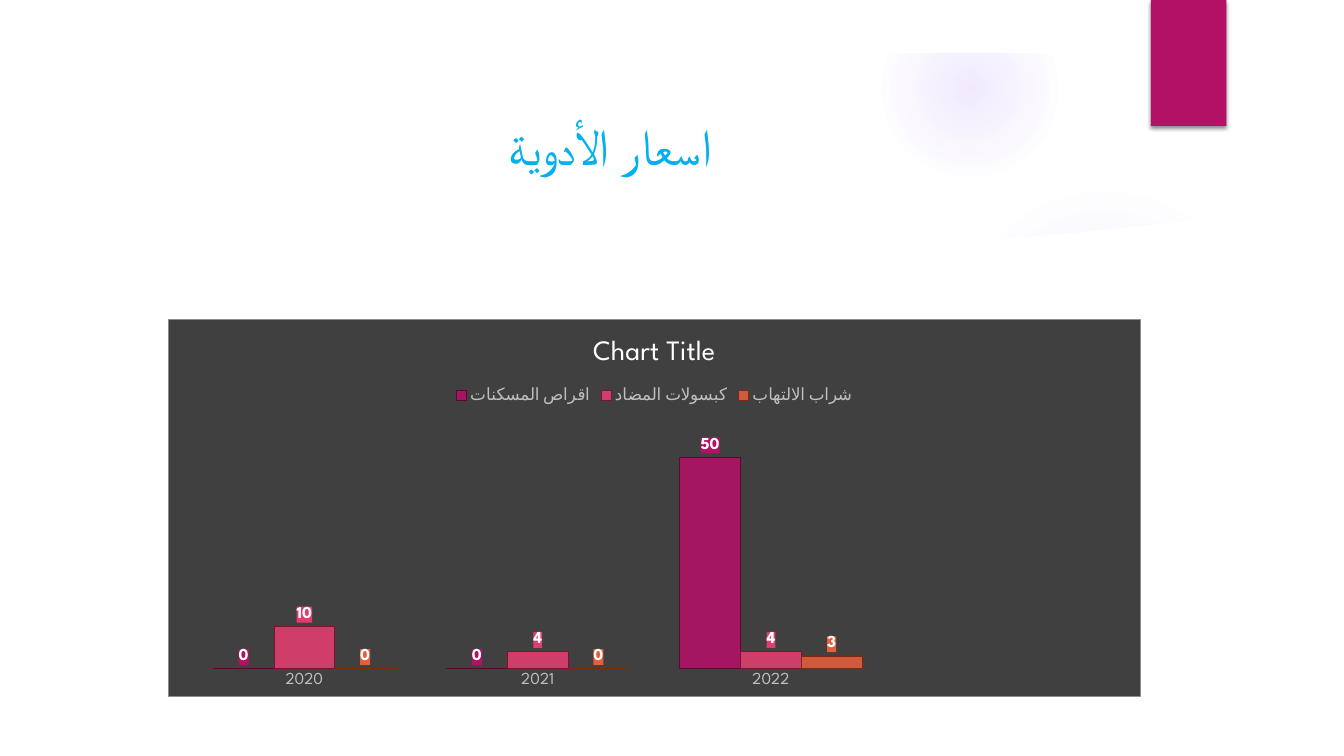
from dataclasses import dataclass

from lxml import etree
from pptx import Presentation
from pptx import util as u
from pptx.chart.data import CategoryChartData
from pptx.dml.color import RGBColor
from pptx.enum import chart as c
from pptx.enum import shapes, text
from pptx.oxml import parse_xml
from pptx.oxml.ns import nsdecls, qn

FONT = "League Spartan"
CELL = u.Inches(1) / 12  # the slide is 160 columns by 90 rows
COLUMNS, ROWS = 160, 90


@dataclass
class Area:
    column: float
    row: float
    columns: float
    rows: float

    def emu(self) -> list[int]:
        return [round(n * CELL) for n in (self.column, self.row, self.columns, self.rows)]


@dataclass
class Glow:
    area: Area
    stops: list[tuple[int, int]]  # position and opacity, in percent


@dataclass
class Medicine:
    name: str
    prices: list[int | None]
    color: str
    outline: str


GLOWS = [
    Glow(Area(113, 22, 37, 37), [(0, 7), (36, 6), (69, 0)]),
    Glow(Area(105, 0, 21, 21), [(0, 14), (36, 7), (73, 0)]),
]
BAND = [(112, 30), (154.7, 25.7), (154, 19.9), (145.6, 22.6), (137.3, 25),
        (129, 27), (120, 28.5), (111.6, 29.2)]
WAVE = [(6, 24.5), (6, 84), (154, 84), (154, 24.5), (140.6, 26.4), (127.2, 27.8),
        (113.9, 28.9), (100.8, 29.5), (85, 29.8), (70, 29.6), (53, 28.9),
        (34, 27.6), (16, 25.8)]
MEDICINES = [
    Medicine("اقراص المسكنات", [0, 0, 50, None], "B31166", "5A0833"),
    Medicine("كبسولات المضاد", [10, 4, 4, None], "E33D6F", "7E1233"),
    Medicine("شراب الالتهاب", [0, 0, 3, None], "E45F3C", "7E2812"),
]


def rgb(color: str) -> RGBColor:
    return RGBColor.from_string(color)


def style(font, size: float, color: str, bold: bool = False) -> None:
    font.name, font.size, font.bold = FONT, u.Pt(size), bold
    font.color.rgb = rgb(color)


def paint(fill, color: str, opacity: int = 100) -> None:
    fill.solid()
    fill.fore_color.rgb = rgb(color)
    if opacity < 100:
        tone = fill._xPr.find(qn("a:solidFill"))[0]
        etree.SubElement(tone, qn("a:alpha")).set("val", str(opacity * 1000))


def add_preset(page, kind, area: Area, color: str):
    shape = page.shapes.add_shape(kind, *area.emu())
    shape.shadow.inherit = False
    shape.line.fill.background()
    paint(shape.fill, color)
    return shape


def add_glow(page, glow: Glow) -> None:
    shape = add_preset(page, shapes.MSO_SHAPE.OVAL, glow.area, "9B6BF2")
    stops = "".join(
        f'<a:gs pos="{place * 1000}"><a:srgbClr val="9B6BF2">'
        f'<a:alpha val="{opacity * 1000}"/></a:srgbClr></a:gs>'
        for place, opacity in glow.stops)
    gradient = parse_xml(
        f'<a:gradFill {nsdecls("a")}><a:gsLst>{stops}</a:gsLst><a:path path="circle">'
        '<a:fillToRect l="50000" t="50000" r="50000" b="50000"/></a:path></a:gradFill>')
    properties = shape._element.spPr
    properties.replace(properties.find(qn("a:solidFill")), gradient)


def add_outline(page, points: list[tuple[float, float]], opacity: int = 100) -> None:
    start, *rest = [(round(x * CELL), round(y * CELL)) for x, y in points]
    builder = page.shapes.build_freeform(*start)
    builder.add_line_segments(rest, close=True)
    shape = builder.convert_to_shape()
    shape.shadow.inherit = False
    shape.line.fill.background()
    paint(shape.fill, "FFFFFF", opacity)


def add_ribbon(page) -> None:
    ribbon = add_preset(page, shapes.MSO_SHAPE.RECTANGLE, Area(137, 0, 9, 15), "B31166")
    effects = ribbon._element.spPr.find(qn("a:effectLst"))
    effects.append(parse_xml(
        f'<a:outerShdw {nsdecls("a")} blurRad="38100" dist="25400" dir="5400000" '
        'rotWithShape="0"><a:srgbClr val="000000"><a:alpha val="45000"/></a:srgbClr>'
        '</a:outerShdw>'))


def add_title(page) -> None:
    box = page.shapes.title
    box.left, box.top, box.width, box.height = Area(15.1, 12.7, 115, 9.2).emu()
    box.text_frame.vertical_anchor = text.MSO_ANCHOR.MIDDLE
    para = box.text_frame.paragraphs[0]
    para.alignment = text.PP_ALIGN.CENTER
    para._p.get_or_add_pPr().set("rtl", "1")
    span = para.add_run()
    span.text = "اسعار الأدوية"
    style(span.font, 36, "00B0F0")


def format_series(series, medicine: Medicine) -> None:
    paint(series.format.fill, medicine.color, 88)
    series.format.line.color.rgb = rgb(medicine.outline)
    series.format.line.width = u.Pt(0.75)
    series.invert_if_negative = False
    labels = series.data_labels
    labels.show_value = True
    labels.position = c.XL_LABEL_POSITION.OUTSIDE_END
    style(labels.font, 12, "FFFFFF", bold=True)
    labels._element.find(qn("c:txPr")).addprevious(parse_xml(
        f'<c:spPr {nsdecls("c", "a")}><a:solidFill><a:srgbClr val="{medicine.color}"/>'
        '</a:solidFill></c:spPr>'))


def add_price_chart(page) -> None:
    data = CategoryChartData()
    data.categories = ["2020", "2021", "2022", ""]
    for medicine in MEDICINES:
        data.add_series(medicine.name, medicine.prices)
    frame = page.shapes.add_chart(
        c.XL_CHART_TYPE.COLUMN_CLUSTERED, *Area(20, 38, 115.8, 44.9).emu(), data)
    chart = frame.chart
    style(chart.font, 10, "000000")

    chart.has_title = True
    span = chart.chart_title.text_frame.paragraphs[0].add_run()
    span.text = "Chart Title"
    style(span.font, 20, "FFFFFF")
    chart.chart_title.include_in_layout = False

    chart.has_legend = True
    chart.legend.position = c.XL_LEGEND_POSITION.TOP
    chart.legend.include_in_layout = False
    style(chart.legend.font, 12, "BFBFBF")

    years = chart.category_axis
    years.major_tick_mark = c.XL_TICK_MARK.NONE
    years.format.line.fill.background()
    style(years.tick_labels.font, 12, "BFBFBF")
    prices = chart.value_axis
    prices.visible = False
    prices.has_major_gridlines = False
    prices.minimum_scale, prices.maximum_scale = 0, 60

    plot = chart.plots[0]
    plot.gap_width, plot.overlap, plot.vary_by_categories = 84, 0, False
    for series, medicine in zip(plot.series, MEDICINES):
        format_series(series, medicine)

    chart._chartSpace.find(qn("c:chart")).addnext(parse_xml(
        f'<c:spPr {nsdecls("c", "a")}><a:solidFill><a:srgbClr val="404040"/></a:solidFill>'
        '<a:ln w="6350"><a:solidFill><a:srgbClr val="8C8C8C"/></a:solidFill></a:ln></c:spPr>'))


def main() -> None:
    deck = Presentation()
    deck.slide_width, deck.slide_height = round(COLUMNS * CELL), round(ROWS * CELL)
    page = deck.slides.add_slide(deck.slide_layouts[5])
    paint(page.background.fill, "FFFFFF")
    for glow in GLOWS:
        add_glow(page, glow)
    add_outline(page, BAND, opacity=20)
    add_outline(page, WAVE)
    border = add_preset(page, shapes.MSO_SHAPE.FRAME, Area(0, 0, COLUMNS, ROWS), "FFFFFF")
    border.adjustments[0] = 0.07
    add_ribbon(page)
    add_title(page)
    # The title placeholder comes first in the tree, so lift it above the backdrop.
    page.shapes._spTree.append(page.shapes.title._element)
    add_price_chart(page)
    deck.save("out.pptx")


if __name__ == "__main__":
    main()
